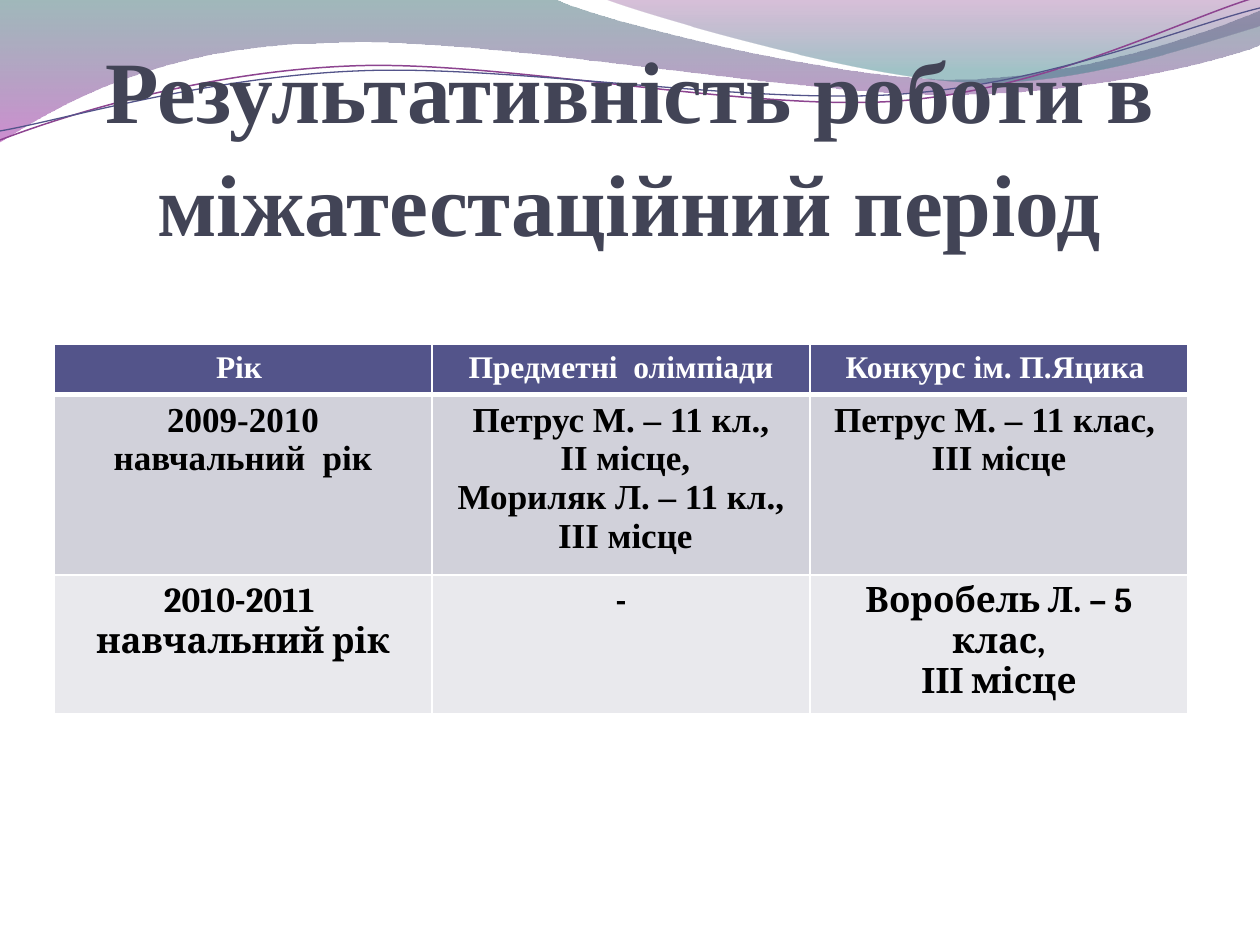
from lxml import etree
from pptx import Presentation
from pptx.dml.color import RGBColor
from pptx.enum.text import MSO_ANCHOR, PP_ALIGN
from pptx.oxml.ns import qn
from pptx.util import Pt

PX = 914400 / 126
CENTER = PP_ALIGN.CENTER
BOTTOM = MSO_ANCHOR.BOTTOM
WHITE = RGBColor(0xFF, 0xFF, 0xFF)
BLACK = RGBColor(0x00, 0x00, 0x00)
SLATE = RGBColor(0x42, 0x44, 0x56)
INDIGO = RGBColor(0x53, 0x54, 0x8A)
PLUM = RGBColor(0x8D, 0x44, 0x90)
TEAL = RGBColor(0x2D, 0x63, 0x68)
PINK = RGBColor(0xA5, 0x30, 0xA9)
PURPLE = RGBColor(0x7F, 0x2F, 0x82)
AQUA = RGBColor(0x2F, 0x7B, 0x82)
DARK = RGBColor(0xD1, 0xD1, 0xDA)
LIGHT = RGBColor(0xE9, 0xE9, 0xED)
SERIF = "Times New Roman"

WAVES = [
    ([[(0, 0)], [(554, -1)],
      [(600, 21), (837, 79), (955, 79)], [(1075, 79), (1207, 33), (1260, 11)],
      [(1261, 45)],
      [(1238, 55), (1096, 96), (940, 94)], [(784, 94), (481, 35), (324, 43)],
      [(163, 45), (58, 105), (-1, 142)]],
     [(0, TEAL, 45), (1, PINK, 55)]),
    ([[(604, -1)],
      [(641, 14), (859, 78), (969, 82)], [(1079, 87), (1211, 40), (1260, 26)],
      [(1260, 0)]],
     [(0, PURPLE, 30), (0.8, AQUA, 45)]),
]
CURVES = [
    ([[(0, 140)], [(60, 117), (199, 72), (349, 66)],
      [(498, 59), (747, 112), (898, 101)], [(1050, 89), (1182, 19), (1257, -3)]],
     PLUM, 0.85),
    ([[(0, 131)], [(59, 121), (207, 77), (357, 71)],
      [(508, 64), (752, 106), (903, 94)], [(1053, 83), (1186, 26), (1260, 8)]],
     INDIGO, 0.75),
]
ROWS = [
    (50, INDIGO, dict(size=18, color=WHITE),
     ["Рік ", "Предметні  олімпіади", "Конкурс ім. П.Яцика "]),
    (168, DARK, dict(size=20),
     ["2009-2010\n навчальний  рік ",
      "Петрус М. – 11 кл.,\n ІІ місце,\nМориляк Л. – 11 кл.,\n ІІІ місце",
      "Петрус М. – 11 клас, \nІІІ місце"]),
    (134, LIGHT, dict(size=20, font="Cambria"),
     ["2010-2011 \nнавчальний рік", "-", "Воробель Л. – 5 клас,\nІІІ місце"]),
]


def px(num):
    """Turn pixels into EMU."""
    return round(num * PX)


def write(frame, text, size=20, font=SERIF, color=BLACK, bold=True, space=None):
    """Fill a text frame with one centred paragraph per line."""
    for i, line in enumerate(text.split("\n")):
        para = frame.add_paragraph() if i else frame.paragraphs[0]
        para.alignment = CENTER
        para.line_spacing = space
        run = para.add_run()
        run.text = line
        run.font.size = Pt(size)
        run.font.name = font
        run.font.bold = bold
        run.font.color.rgb = color


class Deck:
    """Hold the style and the current slide."""

    def __init__(self, wide, high):
        """Open a deck with one blank slide."""
        self.prs = Presentation()
        self.prs.slide_width = px(wide)
        self.prs.slide_height = px(high)
        self.slide = self.prs.slides.add_slide(self.prs.slide_layouts[6])
        self.shapes = self.slide.shapes

    def outline(self, parts, close):
        """Draw an outline of lines (one point) and curves (three points)."""
        (start,), *rest = parts
        form = self.shapes.build_freeform(*start, scale=PX)
        form.add_line_segments([pt for part in rest for pt in part], close=close)
        shape = form.convert_to_shape()
        shape.shadow.inherit = False
        steps = iter(list(shape.element.iter(qn("a:lnTo"))))
        for part in rest:
            step = next(steps)
            if len(part) == 3:
                step.tag = qn("a:cubicBezTo")
                for _ in part[1:]:
                    extra = next(steps)
                    step.append(extra[0])
                    extra.getparent().remove(extra)
        return shape

    def wave(self, parts, stops):
        """Draw a closed shape with a see-through gradient."""
        shape = self.outline(parts, True)
        shape.line.fill.background()
        shape.fill.gradient()
        shape.fill.gradient_angle = 270
        for stop, (place, color, alpha) in zip(shape.fill.gradient_stops, stops):
            stop.position = place
            stop.color.rgb = color
        tones = shape.element.spPr.iter(qn("a:srgbClr"))
        for tone, (_, _, alpha) in zip(tones, stops):
            etree.SubElement(tone, qn("a:alpha"), val=str(alpha * 1000))

    def curve(self, parts, color, width):
        """Draw an open curved line."""
        shape = self.outline(parts, False)
        shape.fill.background()
        shape.line.color.rgb = color
        shape.line.width = Pt(width)

    def label(self, left, top, wide, high, text, **style):
        """Add a text box that sits on its lower edge."""
        frame = self.shapes.add_textbox(*map(px, (left, top, wide, high))).text_frame
        frame.word_wrap = True
        frame.vertical_anchor = BOTTOM
        frame.margin_left = frame.margin_right = frame.margin_bottom = 0
        write(frame, text, **style)

    def border(self, cell, widths):
        """Set white borders, given as left, right, top and bottom points."""
        props = cell._tc.get_or_add_tcPr()
        for i, (side, width) in enumerate(zip("LRTB", widths)):
            line = etree.Element(qn("a:ln" + side), w=str(Pt(width)))
            fill = etree.SubElement(line, qn("a:solidFill"))
            etree.SubElement(fill, qn("a:srgbClr"), val=str(WHITE))
            props.insert(i, line)

    def table(self, left, top, wide, rows):
        """Add a table with equal columns."""
        count = len(rows[0][3])
        high = sum(row[0] for row in rows)
        box = map(px, (left, top, wide, high))
        grid = self.shapes.add_table(len(rows), count, *box).table
        for i, (high, fill, style, texts) in enumerate(rows):
            grid.rows[i].height = px(high)
            for j, text in enumerate(texts):
                cell = grid.cell(i, j)
                cell.fill.solid()
                cell.fill.fore_color.rgb = fill
                self.border(cell, (1, 1, 3 if i == 1 else 1, 1 if i else 3))
                write(cell.text_frame, text, **style)


def main():
    """Build the slide and save it."""
    deck = Deck(1260, 945)
    for wave in WAVES:
        deck.wave(*wave)
    for curve in CURVES:
        deck.curve(*curve)
    deck.label(63, 36, 1134, 218, "Результативність роботи в міжатестаційний період",
               size=50, color=SLATE, space=1.08)
    deck.table(54, 344, 1134, ROWS)
    deck.prs.save("out.pptx")


if __name__ == "__main__":
    main()
